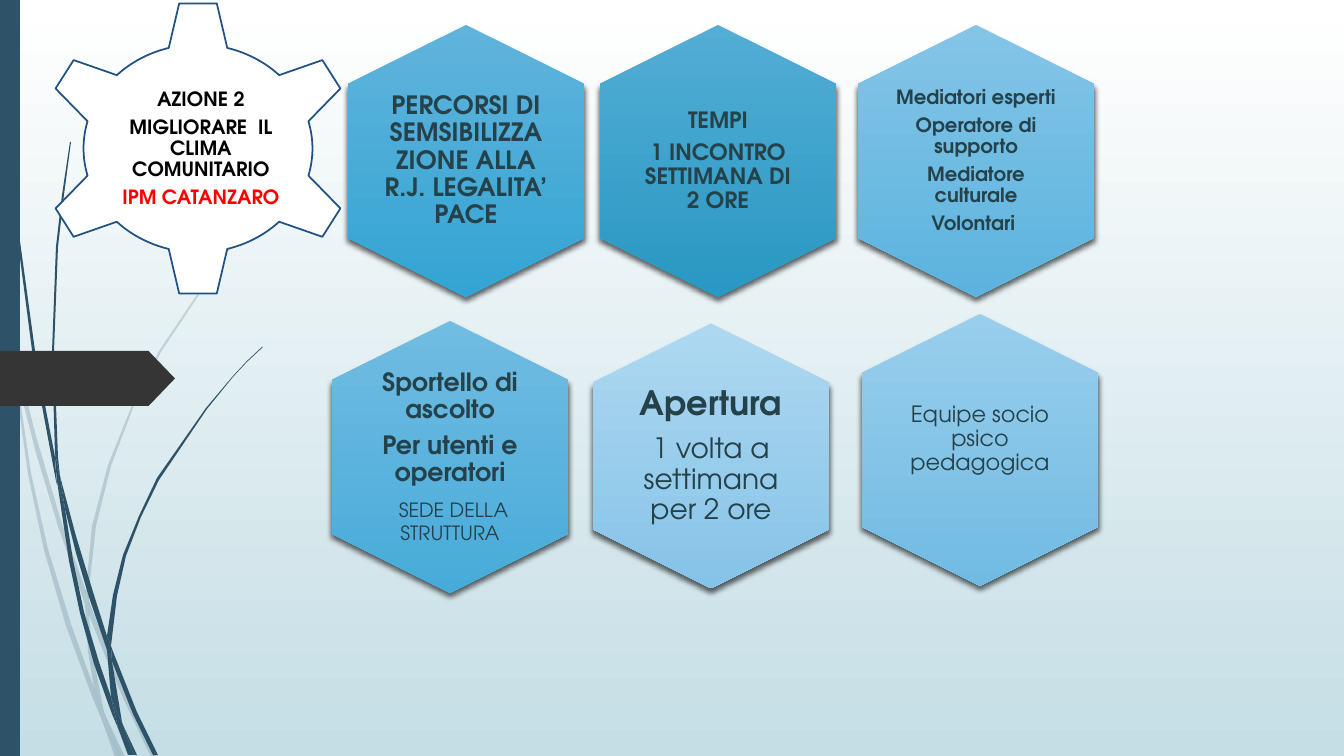
from lxml.etree import SubElement
from pptx import Presentation
from pptx.dml.color import RGBColor
from pptx.enum.shapes import MSO_SHAPE
from pptx.enum.text import MSO_ANCHOR, PP_ALIGN
from pptx.oxml.ns import qn
from pptx.util import Pt

PX = 914400 / 100.8
THEME = {
    "font": "TeX Gyre Adventor",
    "background": ("FFFFFF", "C5DEE5"),
    "stem": "2E5369",
    "tab": "353535",
    "gear": "FFFFFF",
    "gear_line": "225184",
    "title": "000000",
    "alert": "FF0000",
    "body": "254149",
    "shadow": "000000",
    "small": 14,
    "medium": 16,
    "large": 18,
    "larger": 20,
    "heading": 24,
}


def paint(shape, color):
    shape.shadow.inherit = False
    shape.line.fill.background()
    shape.fill.solid()
    shape.fill.fore_color.rgb = RGBColor.from_string(color)


def add_text(center, size, insets, paragraphs):
    (x, y), (width, height) = center, size
    box = slide.shapes.add_textbox(
        *(round(v * PX) for v in (x - width / 2, y - height / 2, width, height)))
    frame = box.text_frame
    left, top, right, bottom = (round(v * PX) for v in insets)
    frame_format = {
        "word_wrap": True, "vertical_anchor": MSO_ANCHOR.MIDDLE,
        "margin_left": left, "margin_top": top,
        "margin_right": right, "margin_bottom": bottom,
    }
    for name, value in frame_format.items():
        setattr(frame, name, value)
    for index, runs in enumerate(paragraphs):
        paragraph = frame.add_paragraph() if index else frame.paragraphs[0]
        paragraph_format = {
            "alignment": PP_ALIGN.CENTER, "line_spacing": 0.9,
            "space_after": Pt(THEME[runs[0][1]] * 0.35),
        }
        for name, value in paragraph_format.items():
            setattr(paragraph, name, value)
        for text, size_name, bold, color in runs:
            run = paragraph.add_run()
            run.text = text
            font_format = {
                "name": THEME["font"], "size": Pt(THEME[size_name]), "bold": bold}
            for name, value in font_format.items():
                setattr(run.font, name, value)
            run.font.color.rgb = RGBColor.from_string(THEME[color])


presentation = Presentation()
presentation.slide_width = round(1344 * PX)
presentation.slide_height = round(756 * PX)
slide = presentation.slides.add_slide(presentation.slide_layouts[6])

background = slide.background.fill
background.gradient()
background.gradient_angle = 270
for stop, color in zip(background.gradient_stops, THEME["background"]):
    stop.color.rgb = RGBColor.from_string(color)

pale_stems = [
    [(0, 284), (9, 325), (11, 353), (10, 347), (0, 301)],
    [(17, 379), (36, 453), (58, 526), (85, 604), (86, 591), (62, 524), (36, 436), (14, 348)],
    [(93, 612), (89, 601), (89, 615), (106, 658), (124, 700), (151, 757), (156, 757),
     (128, 698), (110, 655)],
    [(120, 757), (125, 757), (106, 717)],
    [(94, 688), (71, 624), (48, 549), (31, 473), (17, 379), (11, 353), (28, 474),
     (44, 550), (66, 626), (93, 699), (102, 720), (100, 713)],
    [(85, 604), (88, 651), (94, 688), (97, 698), (106, 717), (104, 712), (92, 651),
     (89, 615), (89, 613)],
    [(89, 589), (96, 526), (111, 466), (133, 408), (161, 352), (231, 247), (270, 200),
     (292, 176), (314, 155), (314, 154), (291, 176), (270, 199), (230, 246), (159, 351),
     (131, 408), (108, 465), (92, 526), (86, 589), (86, 591), (89, 601)],
    [(102, 720), (115, 757), (120, 757)],
    [(89, 613), (89, 615), (89, 601), (86, 591), (85, 604)],
    [(97, 698), (94, 688), (100, 713), (102, 720), (120, 757), (106, 717)],
]
dark_stems = [
    [(7, 111), (17, 235), (33, 358), (56, 481), (57, 485), (55, 461), (55, 457),
     (36, 358), (19, 234), (8, 110), (5, 48), (4, 0), (3, 0), (4, 48)],
    [(89, 597), (107, 650), (107, 638), (107, 636), (94, 595), (76, 536), (60, 476),
     (65, 509), (76, 553)],
    [(114, 654), (111, 646), (112, 661), (133, 714), (153, 755), (158, 755), (137, 712)],
    [(111, 697), (99, 662), (84, 612), (73, 560), (65, 509), (57, 481), (69, 561),
     (80, 613), (94, 664), (112, 714), (118, 728), (117, 723)],
    [(60, 476), (58, 457), (54, 352), (58, 247), (64, 195), (71, 142), (70, 142),
     (62, 195), (56, 247), (52, 352), (55, 453)],
    [(134, 755), (137, 755), (123, 725)],
    [(57, 481), (65, 509), (60, 476), (55, 453), (55, 457)],
    [(112, 638), (117, 596), (126, 556), (141, 517), (159, 480), (207, 409), (233, 377),
     (247, 362), (263, 347), (262, 347), (247, 361), (233, 376), (206, 408), (157, 478),
     (139, 516), (123, 555), (113, 595), (107, 636), (111, 646)],
    [(118, 728), (128, 755), (132, 755)],
    [(107, 650), (111, 697), (117, 712), (123, 725), (122, 722), (112, 661), (110, 656)],
    [(107, 650), (110, 656), (112, 661), (111, 646), (107, 636)],
    [(117, 712), (111, 697), (117, 723), (118, 728), (131, 755), (134, 755), (123, 725)],
]
for opacity, outlines in ((20, pale_stems), (100, dark_stems)):
    for outline in outlines:
        builder = slide.shapes.build_freeform(*outline[0], scale=PX)
        builder.add_line_segments(outline[1:], close=True)
        stem = builder.convert_to_shape()
        paint(stem, THEME["stem"])
        if opacity < 100:
            tint = stem.fill._xPr.find(qn("a:solidFill"))[0]
            SubElement(tint, qn("a:alpha"), val=str(opacity * 1000))

bar = slide.shapes.add_shape(MSO_SHAPE.RECTANGLE, 0, 0, round(20 * PX), round(756 * PX))
paint(bar, THEME["stem"])
tab = slide.shapes.add_shape(
    MSO_SHAPE.PENTAGON, 0, *(round(v * PX) for v in (351, 175, 55)))
tab.adjustments[0] = 0.48
paint(tab, THEME["tab"])

gear = slide.shapes.add_shape(
    MSO_SHAPE.GEAR_6, *(round(v * PX) for v in (39, 0, 318, 297)))
paint(gear, THEME["gear"])
gear.line.color.rgb = RGBColor.from_string(THEME["gear_line"])
gear.line.width = Pt(1.25)
add_text((201, 149), (198, 147), (2, 2, 2, 2), [
    [("AZIONE 2", "small", True, "title")],
    [("MIGLIORARE  IL CLIMA COMUNITARIO", "small", True, "title")],
    [("IPM CATANZARO", "small", True, "alert")],
])

hexagons = [
    ((718, 161), 272, ("53ADD5", "2998C2"), (7, 7, 7, 7), [
        [("TEMPI", "medium", True)],
        [("1 INCONTRO SETTIMANA DI 2 ORE", "medium", True)]]),
    ((466, 161), 272, ("60B4DC", "33A4D3"), (0, 0, 0, 0), [
        [("PERCORSI DI SEMSIBILIZZAZIONE ALLA R.J. LEGALITA’ PACE", "large", True)]]),
    ((450, 457), 272, ("71BCE2", "47ABD9"), (7, 7, 7, 7), [
        [("Sportello di ascolto", "large", True)],
        [("Per utenti e operatori", "large", True)],
        [(" ", "large", True), ("SEDE DELLA STRUTTURA", "small", False)]]),
    ((976, 161), 272, ("84C5E7", "5CB3DE"), (0, 0, 0, 0), [
        [("Mediatori esperti", "small", True)],
        [("Operatore di supporto", "small", True)],
        [("Mediatore culturale", "small", True)],
        [("Volontari ", "small", True)]]),
    ((980, 450), 272, ("99CEEC", "71BBE3"), (7, 7, 7, 29), [
        [("Equipe socio psico pedagogica", "medium", False)]]),
    ((711, 456), 265, ("AED8F1", "86C3E8"), (0, 0, 0, 0), [
        [("Apertura", "heading", True)],
        [("1 volta a settimana per 2 ore", "larger", False)]]),
]
for (x, y), length, colors, insets, paragraphs in hexagons:
    hexagon = slide.shapes.add_shape(
        MSO_SHAPE.HEXAGON,
        *(round(v * PX) for v in (x - length / 2, y - 237 / 2, length, 237)))
    hexagon.rotation = 90
    hexagon.adjustments[0] = 0.25
    hexagon.line.fill.background()
    hexagon.fill.gradient()
    hexagon.fill.gradient_angle = 270
    for stop, color in zip(hexagon.fill.gradient_stops, colors):
        stop.color.rgb = RGBColor.from_string(color)
    properties = hexagon._element.spPr
    properties.find(qn("a:gradFill")).set("rotWithShape", "0")
    hexagon.shadow.inherit = False
    shadow = SubElement(
        properties.find(qn("a:effectLst")), qn("a:outerShdw"),
        blurRad=str(Pt(4)), dist=str(Pt(3)), dir="5400000", rotWithShape="0")
    shade = SubElement(shadow, qn("a:srgbClr"), val=THEME["shadow"])
    SubElement(shade, qn("a:alpha"), val="60000")
    add_text((x, y), (164, 187), insets,
             [[(*run, "body") for run in runs] for runs in paragraphs])

presentation.save("out.pptx")
